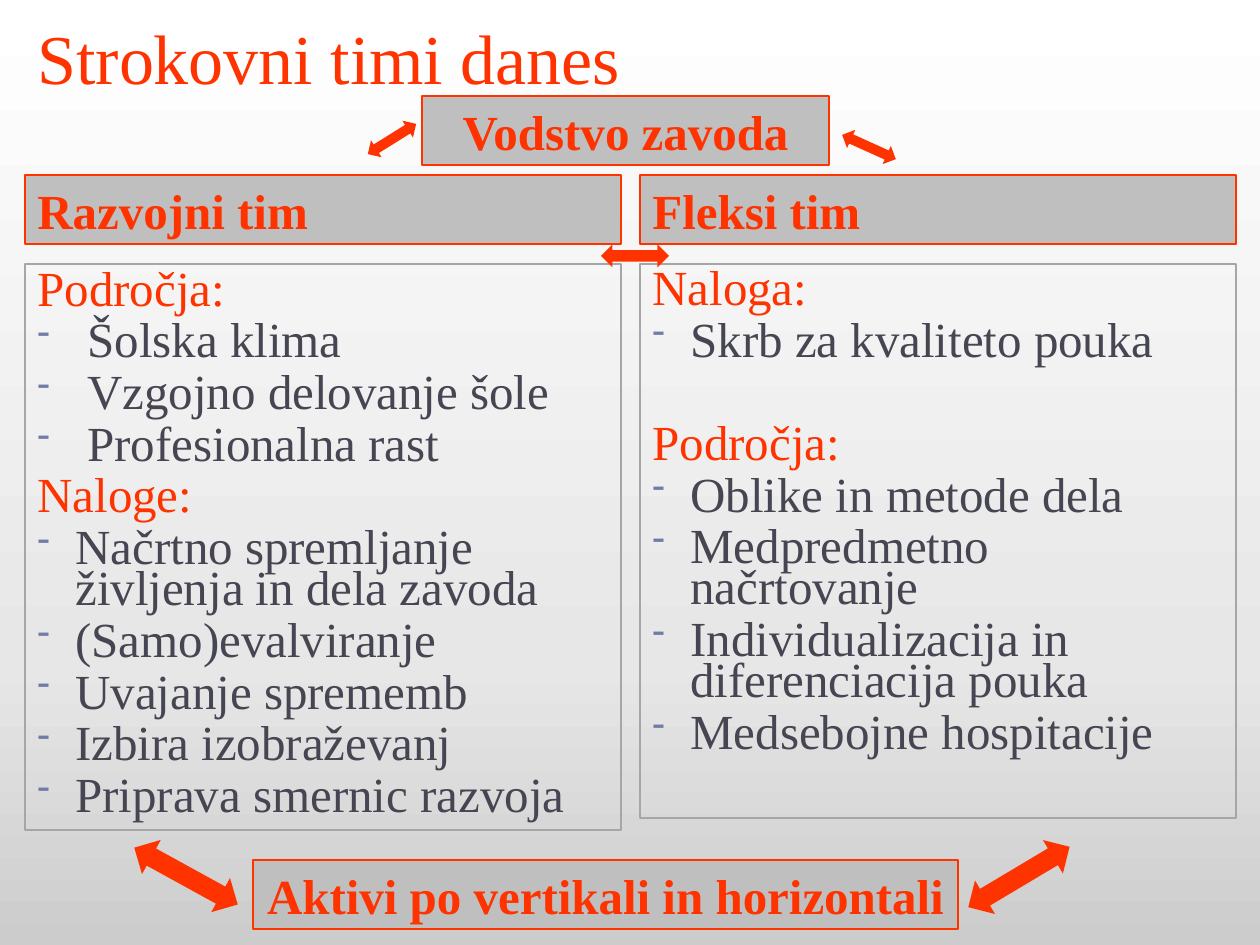
from copy import deepcopy

from lxml.etree import SubElement
from pptx import Presentation
from pptx.dml.color import RGBColor as Rgb
from pptx.enum.shapes import MSO_SHAPE as Shape
from pptx.enum.text import MSO_ANCHOR as Anchor, PP_ALIGN as Align
from pptx.oxml.ns import qn
from pptx.util import Emu, Pt

EMU_PER_PX = 914400 / 126


class Theme:
    font = "Times New Roman"
    accent = Rgb.from_string("FF3300")
    body = Rgb.from_string("464653")
    bullet = "727CA3"
    panel = Rgb.from_string("BFBFBF")
    frame = Rgb.from_string("A6A6A6")
    backdrop = [(0, "CCCCCC"), (0.3, "E7E7E7"), (1, "FFFFFF")]
    title_size = Pt(40)
    text_size = Pt(28)


def px(length):
    return Emu(round(length * EMU_PER_PX))


def write(para, text, color, size=Theme.text_size, bold=False):
    span = para.add_run()
    span.text = text
    span.font.name = Theme.font
    span.font.size = size
    span.font.bold = bold
    span.font.color.rgb = color


deck = Presentation()
deck.slide_width, deck.slide_height = px(1260), px(945)
page = deck.slides.add_slide(deck.slide_layouts[6])

# Background: grey at the bottom to white at the top
fill = page.background.fill
fill.gradient()
fill.gradient_angle = 90
stops = fill.gradient_stops
first = stops[0]._gs
first.addnext(deepcopy(first))
for stop, (position, color) in zip(fill.gradient_stops, Theme.backdrop):
    stop.position = position
    stop.color.rgb = Rgb.from_string(color)

# Title
box = page.shapes.add_textbox(px(25), px(0), px(1143), px(105))
box.text_frame.word_wrap = True
box.text_frame.vertical_anchor = Anchor.BOTTOM
write(box.text_frame.paragraphs[0], "Strokovni timi danes", Theme.accent, Theme.title_size)

# Grey heading bars
bars = [
    ("Fleksi tim", 640, 175, 596, Align.LEFT),
    ("Razvojni tim", 25, 175, 596, Align.LEFT),
    ("Vodstvo zavoda", 422, 96, 407, Align.CENTER),
    ("Aktivi po vertikali in horizontali", 253, 860, 705, Align.CENTER),
]
for text, left, top, width, align in bars:
    bar = page.shapes.add_shape(Shape.RECTANGLE, px(left), px(top), px(width), px(69))
    bar.shadow.inherit = False
    bar.fill.solid()
    bar.fill.fore_color.rgb = Theme.panel
    bar.line.color.rgb = Theme.accent
    bar.line.width = Pt(0.75)
    bar.text_frame.word_wrap = True
    bar.text_frame.vertical_anchor = Anchor.MIDDLE
    para = bar.text_frame.paragraphs[0]
    para.alignment = align
    write(para, text, Theme.accent, bold=True)

# Framed lists: (heading, gap before in points, item indent in px, items)
flexi = [
    ("Naloga:", 6, 38, ["Skrb za kvaliteto pouka"]),
    ("Področja:", 35.5, 38, [
        "Oblike in metode dela",
        "Medpredmetno načrtovanje",
        "Individualizacija in diferenciacija pouka",
        "Medsebojne hospitacije",
    ]),
]
development = [
    ("Področja:", 6, 50, ["Šolska klima", "Vzgojno delovanje šole", "Profesionalna rast"]),
    ("Naloge:", 6, 38, [
        "Načrtno spremljanje življenja in dela zavoda",
        "(Samo)evalviranje",
        "Uvajanje sprememb",
        "Izbira izobraževanj",
        "Priprava smernic razvoja",
    ]),
]
for left, height, bottom_inset, sections in [(640, 554, 58, flexi), (25, 566, 6, development)]:
    panel = page.shapes.add_shape(Shape.RECTANGLE, px(left), px(264), px(596), px(height))
    panel.shadow.inherit = False
    panel.fill.background()
    panel.line.color.rgb = Theme.frame
    panel.line.width = Pt(0.75)
    frame = panel.text_frame
    frame.word_wrap = True
    frame.vertical_anchor = Anchor.MIDDLE
    frame.margin_bottom = px(bottom_inset)
    para = frame.paragraphs[0]
    for heading, gap, indent, items in sections:
        for text in [heading, *items]:
            if para.runs:
                para = frame.add_paragraph()
            is_heading = text == heading
            para.alignment = Align.LEFT
            para.line_spacing = 0.7
            para.space_before = Pt(gap if is_heading else 6)
            write(para, text, Theme.accent if is_heading else Theme.body)
            if not is_heading:
                props = para._p.get_or_add_pPr()
                props.set("marL", str(px(indent)))
                props.set("indent", str(-px(indent)))
                color = SubElement(props, qn("a:buClr"))
                SubElement(color, qn("a:srgbClr"), val=Theme.bullet)
                SubElement(props, qn("a:buSzPct"), val="76000")
                SubElement(props, qn("a:buChar"), char="-")

# Double arrows between the teams: centre, width, length, rotation
arrows = [
    (869, 147, 20, 59, 294.3),
    (186, 876, 39, 118, 298.8),
    (1019, 877, 39, 118, 59.2),
    (392, 139, 20, 57, 58),
    (635, 256, 23, 68, 90),
]
for center_x, center_y, width, length, angle in arrows:
    arrow = page.shapes.add_shape(
        Shape.UP_DOWN_ARROW, px(center_x - width / 2), px(center_y - length / 2), px(width), px(length)
    )
    arrow.rotation = angle
    arrow.shadow.inherit = False
    arrow.fill.solid()
    arrow.fill.fore_color.rgb = Theme.accent
    arrow.line.fill.background()

deck.save("out.pptx")
